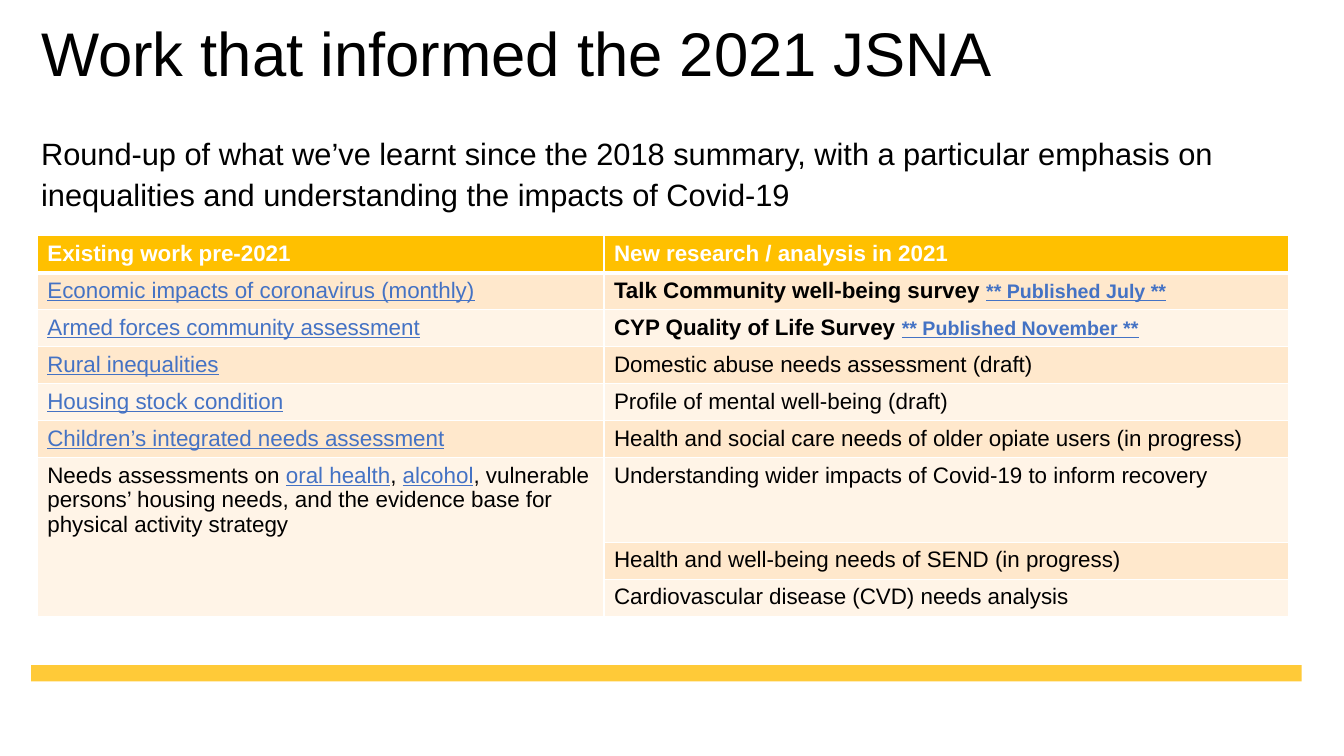
from dataclasses import dataclass

from lxml import etree
from pptx import Presentation
from pptx.dml.color import RGBColor
from pptx.enum.shapes import MSO_SHAPE
from pptx.enum.text import MSO_ANCHOR
from pptx.oxml.ns import qn
from pptx.util import Inches, Pt

RECTANGLE = MSO_SHAPE.RECTANGLE
TOP = MSO_ANCHOR.TOP
MIDDLE = MSO_ANCHOR.MIDDLE


@dataclass(frozen=True)
class TextStyle:
    size: int
    color: str
    bold: bool = False
    underline: bool = False


@dataclass(frozen=True)
class Theme:
    font: str = "Arial"
    accent: str = "FFCA38"
    header_fill: str = "FFC000"
    bands: tuple = ("FFE8CC", "FFF4E7")
    border: str = "FFFFFF"
    title: TextStyle = TextStyle(44, "000000")
    lead: TextStyle = TextStyle(22, "000000")
    header: TextStyle = TextStyle(16, "FFFFFF", bold=True)
    plain: TextStyle = TextStyle(16, "000000")
    strong: TextStyle = TextStyle(16, "000000", bold=True)
    link: TextStyle = TextStyle(16, "4472C4", underline=True)
    note: TextStyle = TextStyle(14, "4472C4", bold=True, underline=True)


THEME = Theme()
GRID = Inches(0.1)
LEFT = 3.1

HEADINGS = ["Existing work pre-2021", "New research / analysis in 2021"]

EXISTING_WORK = [
    [("Economic impacts of coronavirus (monthly)", THEME.link)],
    [("Armed forces community assessment", THEME.link)],
    [("Rural inequalities", THEME.link)],
    [("Housing stock condition", THEME.link)],
    [("Children’s integrated needs assessment", THEME.link)],
    [
        ("Needs assessments on ", THEME.plain),
        ("oral health", THEME.link),
        (", ", THEME.plain),
        ("alcohol", THEME.link),
        (", vulnerable persons’ housing needs, and the evidence base "
         "for physical activity strategy", THEME.plain),
    ],
]

NEW_RESEARCH = [
    [("Talk Community well-being survey ", THEME.strong),
     ("** Published July **", THEME.note)],
    [("CYP Quality of Life Survey ", THEME.strong),
     ("** Published November **", THEME.note)],
    [("Domestic abuse needs assessment (draft)", THEME.plain)],
    [("Profile of mental well-being (draft)", THEME.plain)],
    [("Health and social care needs of older opiate users (in progress)", THEME.plain)],
    [("Understanding wider impacts of Covid-19 to inform recovery", THEME.plain)],
    [("Health and well-being needs of SEND (in progress)", THEME.plain)],
    [("Cardiovascular disease (CVD) needs analysis", THEME.plain)],
]


class SlideBuilder:
    def __init__(self, slide, theme):
        self.slide = slide
        self.theme = theme

    def place(self, *cells):
        return [round(cell * GRID) for cell in cells]

    def add_words(self, paragraph, pieces):
        for words, style in pieces:
            run = paragraph.add_run()
            run.text = words
            font = run.font
            font.name = self.theme.font
            font.size = Pt(style.size)
            font.bold = style.bold
            font.underline = style.underline
            font.color.rgb = RGBColor.from_string(style.color)

    def text(self, area, words, style, spacing, anchor):
        frame = self.slide.shapes.add_textbox(*self.place(*area)).text_frame
        frame.word_wrap = True
        frame.vertical_anchor = anchor
        paragraph = frame.paragraphs[0]
        paragraph.line_spacing = spacing
        self.add_words(paragraph, [(words, style)])

    def bar(self, area):
        stripe = self.slide.shapes.add_shape(RECTANGLE, *self.place(*area))
        stripe.shadow.inherit = False
        stripe.fill.solid()
        stripe.fill.fore_color.rgb = RGBColor.from_string(self.theme.accent)
        stripe.line.fill.background()

    def outline(self, cell, widths):
        properties = cell._tc.get_or_add_tcPr()
        for index, (side, width) in enumerate(widths.items()):
            line = etree.Element(qn(f"a:ln{side}"), w=str(Pt(width)))
            fill = etree.SubElement(line, qn("a:solidFill"))
            etree.SubElement(fill, qn("a:srgbClr"), val=self.theme.border)
            properties.insert(index, line)

    def table(self, left, top, columns, heights, headings, contents):
        area = self.place(left, top, sum(columns), sum(heights))
        table = self.slide.shapes.add_table(len(heights), len(columns), *area).table
        for column, width in zip(table.columns, self.place(*columns)):
            column.width = width
        for row, height in zip(table.rows, self.place(*heights)):
            row.height = height
        for column, (heading, entries) in enumerate(zip(headings, contents)):
            pieces = [[(heading, self.theme.header)]] + entries
            for row in range(len(heights)):
                cell = table.cell(row, column)
                if row < len(pieces):
                    self.add_words(cell.text_frame.paragraphs[0], pieces[row])
                band = self.theme.bands[(row - 1) % 2]
                cell.fill.solid()
                cell.fill.fore_color.rgb = RGBColor.from_string(
                    band if row else self.theme.header_fill)
                self.outline(cell, {"L": 1, "R": 1,
                                    "T": 3 if row == 1 else 1,
                                    "B": 1 if row else 3})
            if len(pieces) < len(heights):
                last_entry = table.cell(len(pieces) - 1, column)
                last_entry.merge(table.cell(len(heights) - 1, column))


def main():
    deck = Presentation()
    deck.slide_width = Inches(13.33)
    deck.slide_height = Inches(7.5)
    builder = SlideBuilder(deck.slides.add_slide(deck.slide_layouts[6]), THEME)

    builder.bar((LEFT, 66, 126, 1.6))
    builder.text((LEFT, 0.5, 124.7, 10.3), "Work that informed the 2021 JSNA",
                 THEME.title, 0.9, MIDDLE)
    builder.text((LEFT, 12.5, 127.6, 9.5),
                 "Round-up of what we’ve learnt since the 2018 summary, with a "
                 "particular emphasis on inequalities and understanding the "
                 "impacts of Covid-19",
                 THEME.lead, 1.1, TOP)
    builder.table(3.7, 23.4, [56.2, 67.9], [3.4] * 6 + [8.4] + [3.4] * 2,
                  HEADINGS, [EXISTING_WORK, NEW_RESEARCH])

    deck.save("out.pptx")


if __name__ == "__main__":
    main()
